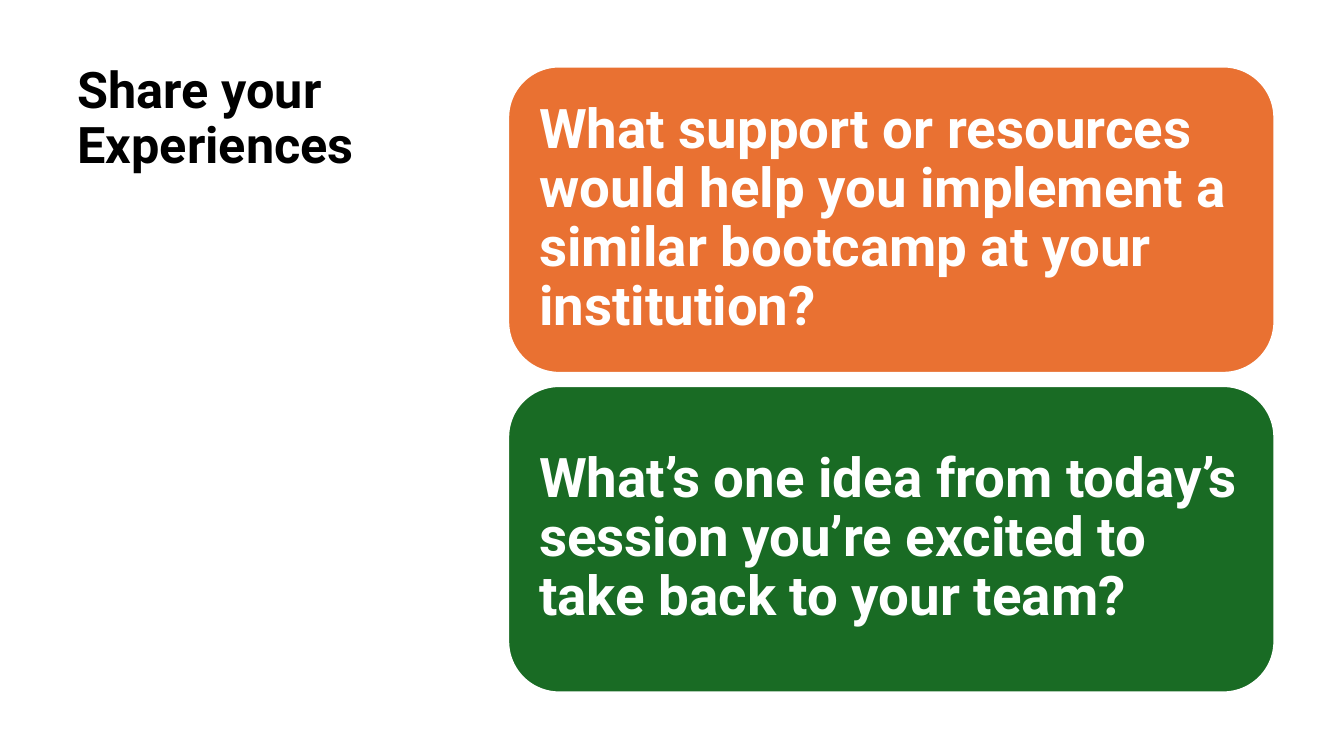
from dataclasses import dataclass

from pptx import Presentation
from pptx.dml.color import RGBColor
from pptx.enum.shapes import MSO_SHAPE as Shape
from pptx.enum.text import MSO_ANCHOR as Anchor, PP_ALIGN as Align
from pptx.util import Inches, Pt


@dataclass(frozen=True)
class Theme:
    font: str = "Roboto"
    black: str = "000000"
    white: str = "FFFFFF"
    orange: str = "E97132"
    green: str = "196B24"
    title_size: float = 36
    question_size: float = 39
    outline: float = 1.5
    line_spacing: float = 0.9


def write_text(shape, text, *, font, size, color, spacing, anchor, inset_x, inset_y):
    """Fill a shape with one bold, left-aligned paragraph."""
    frame = shape.text_frame
    frame.word_wrap = True
    frame.vertical_anchor = anchor
    frame.margin_left = frame.margin_right = Inches(inset_x)
    frame.margin_top = frame.margin_bottom = Inches(inset_y)
    paragraph = frame.paragraphs[0]
    paragraph.alignment = Align.LEFT
    paragraph.line_spacing = spacing
    run = paragraph.add_run()
    run.text = text
    run.font.name = font
    run.font.size = Pt(size)
    run.font.bold = True
    run.font.color.rgb = RGBColor.from_string(color)


class SlideBuilder:
    def __init__(self, slide, theme):
        self.slide = slide
        self.theme = theme

    def title(self, text, left, top, width, height):
        box = self.slide.shapes.add_textbox(
            Inches(left), Inches(top), Inches(width), Inches(height))
        write_text(box, text, font=self.theme.font, size=self.theme.title_size,
                   color=self.theme.black, spacing=self.theme.line_spacing,
                   anchor=Anchor.TOP, inset_x=0.1, inset_y=0.05)

    def question_card(self, text, color, left, top, width, height):
        card = self.slide.shapes.add_shape(
            Shape.ROUNDED_RECTANGLE,
            Inches(left), Inches(top), Inches(width), Inches(height))
        card.shadow.inherit = False
        card.fill.solid()
        card.fill.fore_color.rgb = RGBColor.from_string(color)
        card.line.color.rgb = RGBColor.from_string(self.theme.white)
        card.line.width = Pt(self.theme.outline)
        # The rounded corners already push the text area inwards
        write_text(card, text, font=self.theme.font, size=self.theme.question_size,
                   color=self.theme.white, spacing=self.theme.line_spacing,
                   anchor=Anchor.MIDDLE, inset_x=0.16, inset_y=0.16)


def main():
    presentation = Presentation()
    presentation.slide_width = Inches(13.33)
    presentation.slide_height = Inches(7.5)
    slide = presentation.slides.add_slide(presentation.slide_layouts[6])
    theme = Theme()
    builder = SlideBuilder(slide, theme)

    # Title on the left
    builder.title("Share your Experiences", 0.67, 0.6, 3.82, 6.33)

    # Stacked question cards on the right
    questions = [
        ("What support or resources would help you implement a similar "
         "bootcamp at your institution?", theme.orange),
        ("What’s one idea from today’s session you’re excited to take back "
         "to your team?", theme.green),
    ]
    card_top, card_height, card_gap = 0.66, 3.04, 0.13
    for index, (question, color) in enumerate(questions):
        top = card_top + index * (card_height + card_gap)
        builder.question_card(question, color, 5.04, top, 7.6, card_height)

    presentation.save("out.pptx")


if __name__ == "__main__":
    main()
